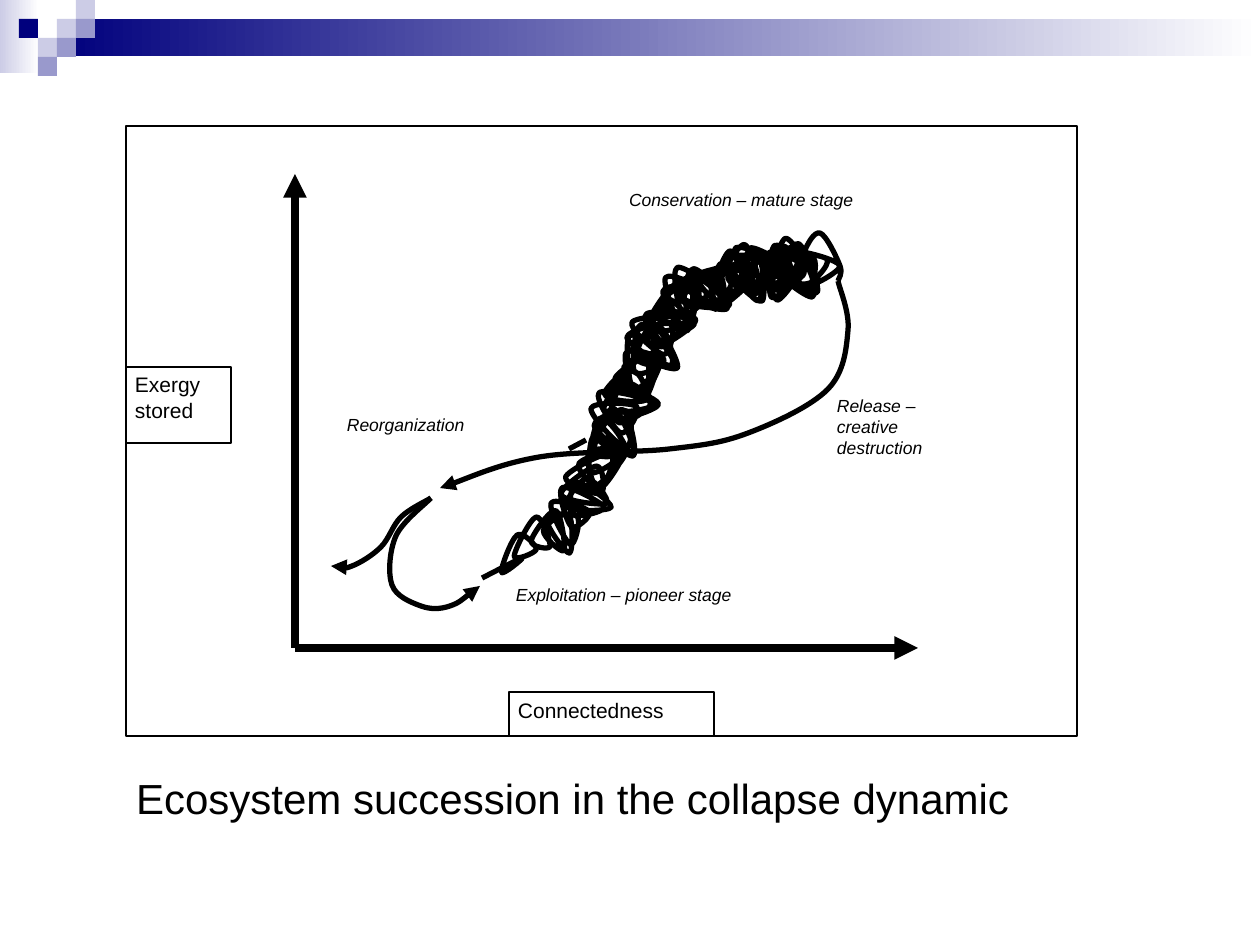
from math import cos, sin
from lxml.etree import SubElement
from pptx import Presentation
from pptx.dml.color import RGBColor
from pptx.enum.shapes import MSO_CONNECTOR, MSO_SHAPE
from pptx.enum.text import MSO_ANCHOR, MSO_AUTO_SIZE, PP_ALIGN
from pptx.oxml.ns import qn
from pptx.util import Pt

SCALE = 914400 / 126
NAVY = RGBColor(0x00, 0x00, 0x7D)
LILAC = RGBColor(0x99, 0x99, 0xCC)
PALE = RGBColor(0xCC, 0xCC, 0xE6)
WHITE = RGBColor(0xFF, 0xFF, 0xFF)
BLACK = RGBColor(0x00, 0x00, 0x00)

SQUARE = 19
HEADER_SQUARES = [(3, 1, PALE), (4, 0, PALE), (4, 1, LILAC), (2, 2, PALE),
                  (1, 1, NAVY), (3, 2, LILAC), (2, 3, LILAC)]

SPINE = [(380, 432), (446, 395), (482, 322), (514, 244), (554, 174), (630, 144), (686, 144)]
SCRIBBLE_KNOTS = 200

RELEASE = [(712, 155), (722, 204), (702, 263), (622, 307), (543, 323), (413, 331), (314, 362)]
DEPARTURE = [(305, 372), (275, 391), (255, 421), (226, 440), (205, 440)]
RENEWAL = [(305, 372), (270, 410), (266, 459), (295, 480), (324, 480), (354, 460)]

AXIS_LABELS = [("Exergy\nstored", (0, 241, 105, 76)), ("Connectedness", (383, 566, 205, 44))]
STAGE_LABELS = [("Exploitation – pioneer stage", (377, 452, 415, 57)),
                ("Conservation – mature stage", (490, 57, 396, 57)),
                ("Release –\ncreative\ndestruction", (698, 263, 151, 151)),
                ("Reorganization", (208, 282, 189, 76))]


def px(*lengths):
    """Turn pixel lengths into EMU."""
    return [round(length * SCALE) for length in lengths]


def shift(box, origin):
    """Move a box by the left and top of its region."""
    return (box[0] + origin[0], box[1] + origin[1], *box[2:])


def add_block(page, box, fill=None, line=None):
    """Add a flat rectangle."""
    block = page.shapes.add_shape(MSO_SHAPE.RECTANGLE, *px(*box))
    block.shadow.inherit = False
    if fill is None:
        block.fill.background()
    else:
        block.fill.solid()
        block.fill.fore_color.rgb = fill
    if line is None:
        block.line.fill.background()
    else:
        block.line.color.rgb = line
        block.line.width = Pt(0.75)
    return block


def write(shape, text, size, italic=False, insets=(13, 6)):
    """Fill a shape with left-aligned black text."""
    frame = shape.text_frame
    frame.text = text
    frame.word_wrap = True
    frame.vertical_anchor = MSO_ANCHOR.TOP
    frame.margin_left, frame.margin_top = frame.margin_right, frame.margin_bottom = px(*insets)
    for para in frame.paragraphs:
        para.alignment = PP_ALIGN.LEFT
        for span in para.runs:
            span.font.name = "Arial"
            span.font.size = Pt(size)
            span.font.italic = italic
            span.font.color.rgb = BLACK


def ink(shape, width, arrow):
    """Give a stroke its black line and arrowhead."""
    shape.line.color.rgb = BLACK
    shape.line.width = Pt(width)
    if arrow:
        outline = shape._element.spPr.find(qn("a:ln"))
        SubElement(outline, qn("a:tailEnd"), type="triangle")


def add_line(page, origin, start, end, width, arrow=True):
    """Add a straight stroke."""
    ends = px(*shift(start, origin), *shift(end, origin))
    stroke = page.shapes.add_connector(MSO_CONNECTOR.STRAIGHT, *ends)
    ink(stroke, width, arrow)
    SubElement(stroke._element.spPr, qn("a:effectLst"))


def add_curve(page, origin, knots, arrow=True):
    """Add a smooth stroke running through the knots."""
    points = [px(*shift(knot, origin)) for knot in knots]
    builder = page.shapes.build_freeform(*points[0])
    builder.add_line_segments(points[1:], close=False)
    curve = builder.convert_to_shape()
    curve.shadow.inherit = False
    curve.fill.background()
    ink(curve, 3, arrow)
    outline = next(curve._element.iter(qn("a:path")))
    local = [(x - curve.left, y - curve.top) for x, y in points]
    padded = [local[0], *local, local[-1]]
    for segment, before, start, end, after in zip(
            outline.findall(qn("a:lnTo")), padded, padded[1:], padded[2:], padded[3:]):
        leave = [s + (e - b) / 6 for b, s, e in zip(before, start, end)]
        arrive = [e - (a - s) / 6 for s, e, a in zip(start, end, after)]
        bezier = SubElement(outline, qn("a:cubicBezTo"))
        for x, y in (leave, arrive, end):
            SubElement(bezier, qn("a:pt"), x=str(round(x)), y=str(round(y)))
        outline.remove(segment)


def scribble():
    """Wind uneven loops along the spine, denser towards its top."""
    knots = [(356, 452)]
    for turn in range(SCRIBBLE_KNOTS):
        progress = (turn / SCRIBBLE_KNOTS) ** 0.7
        place = progress * (len(SPINE) - 1)
        joint = int(place)
        x, y = [a + (b - a) * (place - joint) for a, b in zip(SPINE[joint], SPINE[joint + 1])]
        radius = 16 + 8 * min(1, 3 * progress) + 8 * sin(1.7 * turn)
        knots.append((x + radius * cos(2.2 * turn), y + radius * sin(2.2 * turn)))
    return knots + [(694, 107), (714, 140), RELEASE[0]]


def add_header(page, origin):
    """Draw the fading bars and the squares at the top."""
    for box, color in [((0, 0, 39, 73), PALE), ((57, 19, 1203, 37), NAVY)]:
        bar = add_block(page, shift(box, origin), WHITE)
        bar.fill.gradient()
        bar.fill.gradient_angle = 0
        for stop, shade in zip(bar.fill.gradient_stops, (color, WHITE)):
            stop.color.rgb = shade
    for column, row, color in HEADER_SQUARES:
        box = (column * SQUARE, row * SQUARE, SQUARE, SQUARE)
        add_block(page, shift(box, origin), color)


def add_diagram(page, box):
    """Draw the succession loop between its two axes."""
    origin = box[:2]
    add_block(page, box, line=BLACK)
    for tip in [(169, 48), (792, 522)]:
        add_line(page, origin, (169, 522), tip, 4.5)
    for text, place in AXIS_LABELS:
        label = add_block(page, shift(place, origin), line=BLACK)
        write(label, text, 12, insets=(9, 5))
    add_curve(page, origin, scribble(), arrow=False)
    for knots in (RELEASE, DEPARTURE, RENEWAL):
        add_curve(page, origin, knots)
    add_line(page, origin, (443, 323), (460, 314), 3, arrow=False)
    for text, place in STAGE_LABELS:
        write(page.shapes.add_textbox(*px(*shift(place, origin))), text, 10, italic=True)


def add_caption(page, box):
    """Place the title below the diagram."""
    title = page.shapes.title
    title.left, title.top, title.width, title.height = px(*box)
    write(title, "Ecosystem succession in the collapse dynamic", 24)
    title.text_frame.auto_size = MSO_AUTO_SIZE.NONE


def main():
    """Build the deck and save it."""
    deck = Presentation()
    deck.slide_width, deck.slide_height = px(1260, 945)
    page = deck.slides.add_slide(deck.slide_layouts[5])
    add_header(page, (0, 0))
    add_diagram(page, (126, 126, 951, 610))
    add_caption(page, (123, 766, 989, 63))
    deck.save("out.pptx")


if __name__ == "__main__":
    main()
